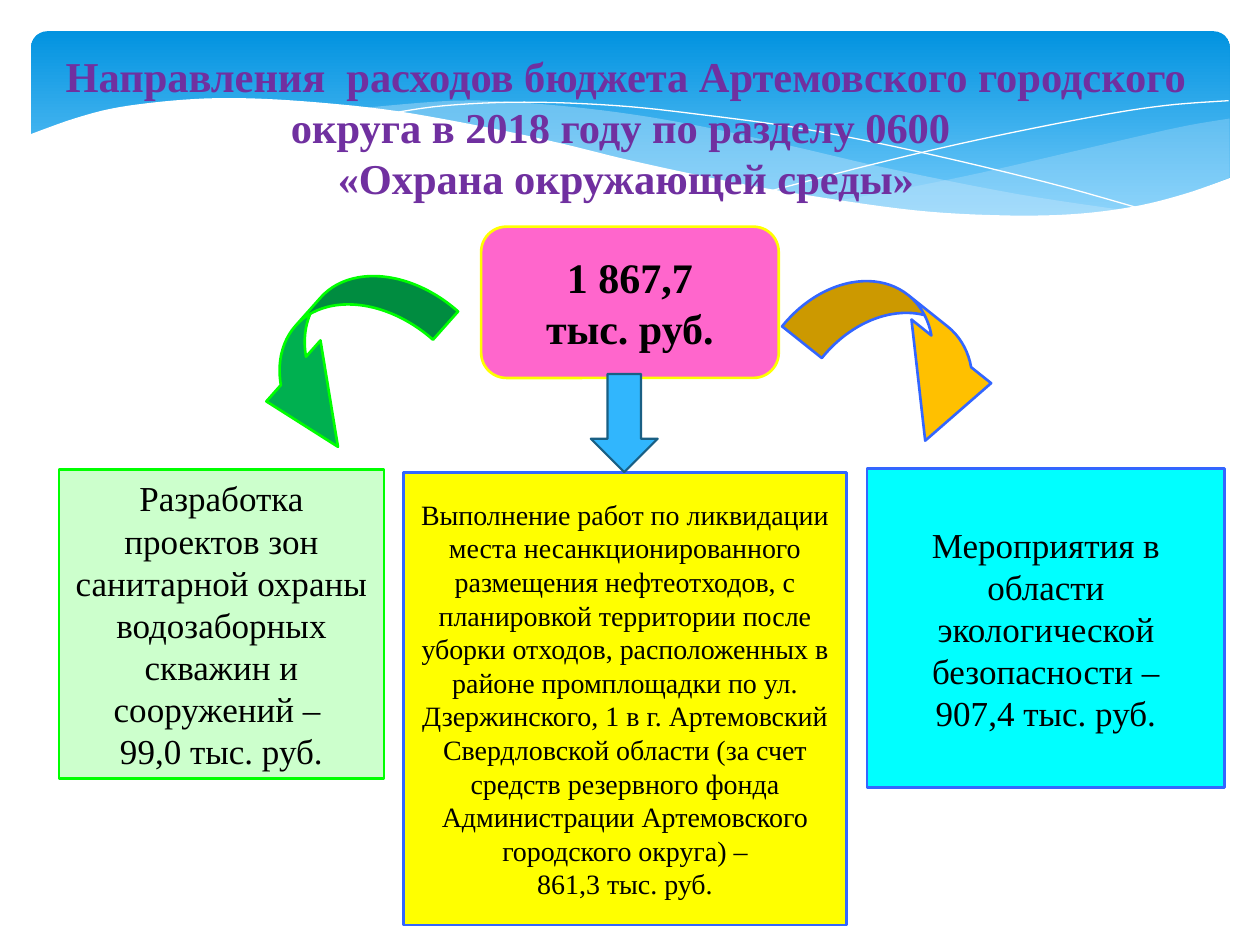
from dataclasses import dataclass

from lxml import etree
from pptx import Presentation
from pptx import util as u
from pptx.dml.color import RGBColor
from pptx.enum import shapes, text
from pptx.oxml.ns import qn

G = shapes.MSO_SHAPE


@dataclass(frozen=True)
class Theme:
    font: str = "Times New Roman"
    title: str = "7030A0"
    ink: str = "000000"
    sky: str = "0293E0"
    sky_light: str = "83D3FE"
    mist: str = "C6E7FC"
    white: str = "FFFFFF"
    pink: str = "FF66CC"
    yellow: str = "FFFF00"
    mint: str = "CCFFCC"
    lime: str = "00FF00"
    cyan: str = "00FFFF"
    blue: str = "3366FF"
    amber: str = "FFC000"
    green: str = "00B050"
    azure: str = "31B6FD"
    navy: str = "195F84"
    title_size: float = 24.3
    total_size: float = 24
    body_size: float = 20
    small_size: float = 16
    border: float = 1.5


T = Theme()

WHITE_WAVE = [(0.58, 2.72), (1.5, 2.39), (2.41, 2.16), (3.71, 2.01), (4.9, 1.98), (6.35, 2.06),
              (8, 2.24), (9.93, 2.59), (11.35, 2.9), (12.78, 3.25), (14.71, 3.66), (16.43, 3.96),
              (18.44, 4.24), (20.14, 4.34), (21.59, 4.32), (22.83, 4.17), (23.88, 3.91), (24.82, 3.58)]
WHITE_BASE = [(24.82, 5.69), (0.58, 5.69)]
RIGHT_TOP = [(24.79, 2.39), (23.75, 2.57), (21.87, 3), (19.79, 3.48), (17.93, 3.86), (16.79, 4.06)]
RIGHT_BOTTOM = [(16.79, 4.06), (18.24, 4.24), (19.84, 4.37), (21.21, 4.37), (22.58, 4.22),
                (23.75, 3.96), (24.79, 3.58)]
LONG_TOP = [(22.68, 4.24), (20.5, 3.91), (17.93, 3.4), (15.98, 2.95), (14.1, 2.54), (12.42, 2.26),
            (10.67, 2.08), (9.17, 2.03), (7.26, 2.18)]
LONG_BOTTOM = [(7.26, 2.18), (8.69, 2.39), (10.26, 2.69), (12.47, 3.2), (14.38, 3.63), (16.51, 4.01),
               (18.34, 4.27), (20.22, 4.39), (21.54, 4.37), (22.68, 4.24)]
FALLING_LINE = [(7.85, 2.29), (8.97, 2.13), (10.57, 2.06), (12.42, 2.13), (14.12, 2.31),
                (16.15, 2.59), (18.47, 3.05), (21.11, 3.68), (23.04, 4.22)]
RISING_LINE = [(15.57, 3.84), (17.65, 3.3), (19.71, 2.82), (22, 2.36), (23.47, 2.13), (24.77, 2.03)]


def smooth(knots, steps=6):
    """Return points of a Catmull-Rom curve through the knots."""
    padded = [knots[0], *knots, knots[-1]]
    points = []
    for a, b, c, d in zip(padded, padded[1:], padded[2:], padded[3:]):
        for t in (i / steps for i in range(steps)):
            points.append(tuple(
                (2 * q + (r - p) * t + (2 * p - 5 * q + 4 * r - v) * t ** 2
                 + (3 * q - p - 3 * r + v) * t ** 3) / 2
                for p, q, r, v in zip(a, b, c, d)))
    return points + [knots[-1]]


class SlideBuilder:
    def __init__(self, slide, theme):
        self.s, self.theme = slide, theme

    def style(self, sp, fill=None, line=None, width=T.border, opacity=None):
        sp.shadow.inherit = False
        if fill:
            sp.fill.solid()
            sp.fill.fore_color.rgb = RGBColor.from_string(fill)
        else:
            sp.fill.background()
        if opacity:
            color = sp.element.spPr.find(qn("a:solidFill"))[0]
            etree.SubElement(color, qn("a:alpha"), val=str(opacity * 1000))
        if line:
            sp.line.color.rgb = RGBColor.from_string(line)
            sp.line.width = u.Pt(width)
        else:
            sp.line.fill.background()
        return sp

    def fill_text(self, sp, lines, size, color, bold=False, inset=(0.3, 0)):
        tf = sp.text_frame
        x, y = map(u.Cm, inset)
        frame = dict(word_wrap=True, vertical_anchor=text.MSO_ANCHOR.MIDDLE,
                     margin_left=x, margin_right=x, margin_top=y, margin_bottom=y)
        for name, value in frame.items():
            setattr(tf, name, value)
        for i, line in enumerate(lines):
            p = tf.add_paragraph() if i else tf.paragraphs[0]
            p.alignment = text.PP_ALIGN.CENTER
            r = p.add_run()
            r.text = line
            for name, value in dict(name=self.theme.font, size=u.Pt(size), bold=bold).items():
                setattr(r.font, name, value)
            r.font.color.rgb = RGBColor.from_string(color)

    def shape(self, kind, box, rotation=0, adjust=(), **look):
        sp = self.s.shapes.add_shape(kind, *map(u.Cm, box))
        sp.rotation = rotation
        for i, value in enumerate(adjust):
            sp.adjustments[i] = value
        return self.style(sp, **look)

    def gradient(self, box, adjust, colors):
        sp = self.shape(G.ROUNDED_RECTANGLE, box, adjust=adjust)
        sp.fill.gradient()
        sp.fill.gradient_angle = 270
        for stop, color, position in zip(sp.fill.gradient_stops, colors, (0, 0.9)):
            stop.color.rgb = RGBColor.from_string(color)
            stop.position = position

    def outline(self, points, close=True, **look):
        start, *rest = [tuple(map(u.Cm, point)) for point in points]
        fb = self.s.shapes.build_freeform(*start)
        fb.add_line_segments(rest, close=close)
        self.style(fb.convert_to_shape(), **look)

    def title(self, box, lines):
        sp = self.s.shapes.add_textbox(*map(u.Cm, box))
        self.fill_text(sp, lines, self.theme.title_size, self.theme.title, True, (0.25, 0.13))

    def card(self, box, lines, size, kind=G.RECTANGLE, bold=False, inset=(0.3, 0), **look):
        sp = self.shape(kind, box, **look)
        self.fill_text(sp, lines, size, self.theme.ink, bold, inset)


def main():
    prs = Presentation()
    prs.slide_width, prs.slide_height = u.Cm(25.4), u.Cm(19.05)
    b = SlideBuilder(prs.slides.add_slide(prs.slide_layouts[6]), T)

    b.gradient((0.63, 0.63, 24.16, 4.6), [0.071], (T.sky, T.sky_light))
    b.outline(smooth(RIGHT_TOP) + smooth(RIGHT_BOTTOM), fill=T.mist, opacity=29)
    b.outline(smooth(LONG_TOP) + smooth(LONG_BOTTOM), fill=T.mist, opacity=40)
    for knots in (FALLING_LINE, RISING_LINE):
        b.outline(smooth(knots), close=False, line=T.white, width=0)
    b.outline(smooth(WHITE_WAVE) + WHITE_BASE, fill=T.white)

    b.title((0.58, 0.85, 24.08, 3.4), [
        "Направления  расходов бюджета Артемовского городского округа в 2018 году по разделу 0600 ",
        "«Охрана окружающей среды»"])
    b.card((9.7, 4.57, 6, 3.05), ["1 867,7", "тыс. руб."], T.total_size, G.ROUNDED_RECTANGLE,
           True, (0.36, 0.13), fill=T.pink, line=T.yellow)
    b.card((1.19, 9.47, 6.55, 6.22), [
        "Разработка проектов зон санитарной охраны водозаборных скважин и сооружений – ",
        "99,0 тыс. руб."], T.body_size, fill=T.mint, line=T.lime)
    b.card((17.48, 9.45, 7.21, 6.43), [
        "Мероприятия в области экологической безопасности –",
        "907,4 тыс. руб."], T.body_size, fill=T.cyan, line=T.blue)
    b.shape(G.CURVED_DOWN_ARROW, (15.9, 6.2, 4.72, 2.08), 38.6, (0.493, 0.988, 0.834),
            fill=T.amber, line=T.blue)
    b.shape(G.CURVED_UP_ARROW, (4.67, 6.07, 4.47, 2.26), 131.6, (0.338, 0.727, 0.747),
            fill=T.green, line=T.lime)
    b.card((8.13, 9.53, 8.94, 9.12), [
        "Выполнение работ по ликвидации места несанкционированного размещения нефтеотходов, "
        "с планировкой территории после уборки отходов, расположенных в районе промплощадки "
        "по ул. Дзержинского, 1 в г. Артемовский Свердловской области (за счет средств "
        "резервного фонда Администрации Артемовского городского округа) –",
        "861,3 тыс. руб."], T.small_size, fill=T.yellow, line=T.blue)
    b.shape(G.DOWN_ARROW, (11.91, 7.54, 1.35, 1.98), fill=T.azure, line=T.navy, width=1.25)
    prs.save("out.pptx")


if __name__ == "__main__":
    main()
